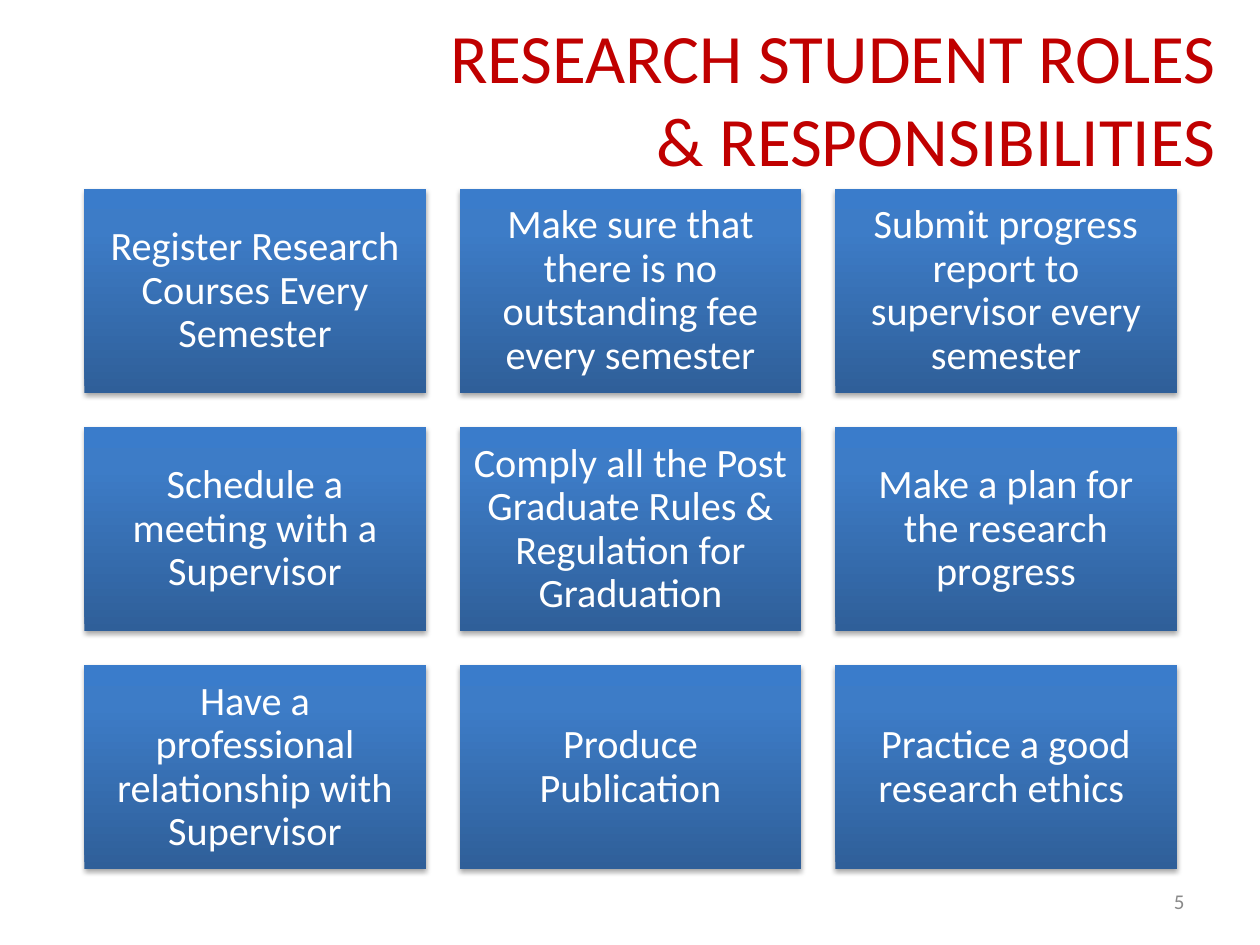
from lxml.etree import SubElement
from pptx import Presentation
from pptx.dml.color import RGBColor
from pptx.enum.dml import MSO_THEME_COLOR
from pptx.enum.shapes import MSO_SHAPE
from pptx.enum.text import MSO_ANCHOR, MSO_AUTO_SIZE, PP_ALIGN
from pptx.oxml import parse_xml
from pptx.oxml.ns import nsdecls
from pptx.util import Inches, Pt

GRADIENT = [(0, "2F5F99"), (80, "3D7CC7"), (100, "3A7CCB")]
DUTIES = [
    "Register Research Courses Every Semester",
    "Make sure that there is no outstanding fee every semester",
    "Submit progress report to supervisor every semester",
    "Schedule a meeting with a Supervisor",
    "Comply all the Post Graduate Rules & Regulation for Graduation",
    "Make a plan for the research progress",
    "Have a professional relationship with Supervisor",
    "Produce Publication",
    "Practice a good research ethics ",
]
COLUMNS = 3
GRID_LEFT, GRID_TOP = 0.67, 1.5
CARD_WIDTH, CARD_HEIGHT = 2.71, 1.62
GAP = 0.27


def write(frame, text, size, color, align):
    """Fill a text frame with one paragraph, centred vertically."""
    frame.word_wrap = True
    frame.auto_size = MSO_AUTO_SIZE.NONE
    frame.vertical_anchor = MSO_ANCHOR.MIDDLE
    paragraph = frame.paragraphs[0]
    paragraph.text = text
    paragraph.alignment = align
    paragraph.font.name = "Calibri"
    paragraph.font.size = Pt(size)
    paragraph.font.color.rgb = RGBColor.from_string(color)
    return paragraph


def shade(card):
    """Give a card its vertical gradient and soft shadow below."""
    stops = "".join(
        f'<a:gs pos="{share * 1000}"><a:srgbClr val="{color}"/></a:gs>'
        for share, color in GRADIENT
    )
    card.line.fill.background()
    card.line._ln.addprevious(parse_xml(
        f'<a:gradFill {nsdecls("a")} rotWithShape="1"><a:gsLst>{stops}</a:gsLst>'
        '<a:lin ang="16200000" scaled="0"/></a:gradFill>'
    ))
    card.shadow.inherit = False
    card._element.spPr.effectLst.append(parse_xml(
        f'<a:outerShdw {nsdecls("a")} blurRad="{Pt(3.1)}" dist="{Pt(1.8)}" dir="5400000"'
        ' rotWithShape="0"><a:srgbClr val="000000"><a:alpha val="35000"/></a:srgbClr>'
        '</a:outerShdw>'
    ))


prs = Presentation()
prs.slide_width, prs.slide_height = Inches(10), Inches(7.5)
slide = prs.slides.add_slide(prs.slide_layouts[5])

title = slide.shapes.title
title.left, title.top = Inches(1.92), Inches(0.3)
title.width, title.height = Inches(7.83), Inches(0.95)
write(title.text_frame, "RESEARCH STUDENT ROLES\v& RESPONSIBILITIES", 39.6, "C00000", PP_ALIGN.RIGHT)

for index, duty in enumerate(DUTIES):
    row, column = divmod(index, COLUMNS)
    card = slide.shapes.add_shape(
        MSO_SHAPE.RECTANGLE,
        Inches(GRID_LEFT + column * (CARD_WIDTH + GAP)),
        Inches(GRID_TOP + row * (CARD_HEIGHT + GAP)),
        Inches(CARD_WIDTH), Inches(CARD_HEIGHT),
    )
    shade(card)
    frame = card.text_frame
    frame.margin_left = frame.margin_right = Inches(0.1)
    frame.margin_top = frame.margin_bottom = Inches(0.1)
    write(frame, duty, 23, "FFFFFF", PP_ALIGN.CENTER).line_spacing = 0.9

page_number = slide.shapes.add_textbox(Inches(7.17), Inches(6.95), Inches(2.33), Inches(0.4))
write(page_number.text_frame, "5", 12, "898989", PP_ALIGN.RIGHT)

prs.save("out.pptx")
